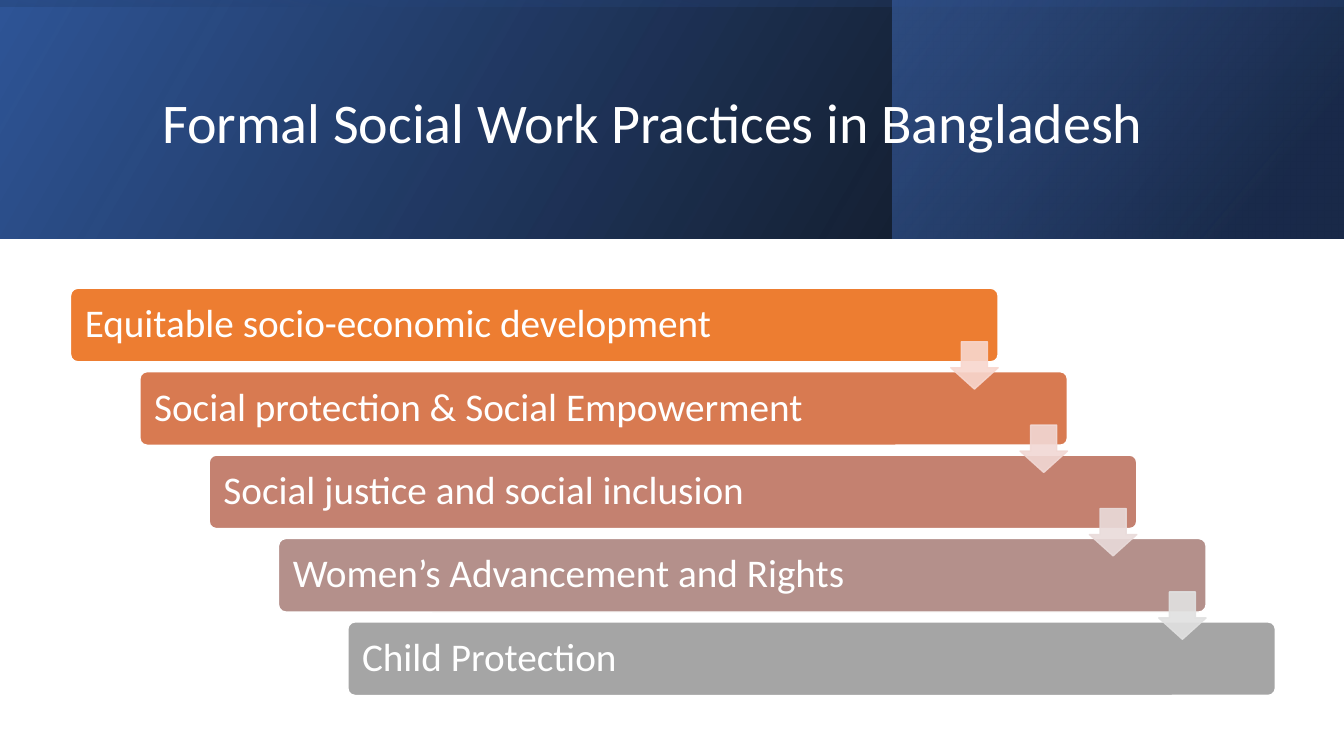
from dataclasses import dataclass

from lxml import etree
from pptx import Presentation
from pptx.dml.color import RGBColor
from pptx.enum import shapes, text
from pptx.oxml import ns
from pptx.util import Inches, Pt


@dataclass(frozen=True)
class Theme:
    font: str = "Calibri"
    title_size: int = 40
    step_size: int = 28
    white: str = "FFFFFF"
    # Gradient stops: position %, colour, opacity %
    band_base: tuple = ((0, "000000", 96), (100, "2F5597", 100))
    band_right: tuple = ((19, "203864", 68), (100, "4472C4", 48))
    band_shade: tuple = ((23, "2F5597", 16), (99, "000000", 45))
    step_fills: tuple = ("ED7D31", "D87A51", "C48170", "B4908B", "A5A5A5")
    arrow_fills: tuple = ("F8D7CE", "F1D8D4", "E9DBDA", "E1E1E1")
    arrow_opacity: int = 90


THEME = Theme()
TITLE = "Formal Social Work Practices in Bangladesh"
STEPS = (
    "Equitable socio-economic development",
    "Social protection & Social Empowerment",
    "Social justice and social inclusion",
    "Women’s Advancement and Rights",
    "Child Protection",
)


def set_opacity(color_element, percent):
    alpha = etree.SubElement(color_element, ns.qn("a:alpha"))
    alpha.set("val", str(percent * 1000))


def add_shape(slide, kind, left, top, width, height):
    shape = slide.shapes.add_shape(
        kind, Inches(left), Inches(top), Inches(width), Inches(height))
    shape.shadow.inherit = False
    return shape


def paint(shape, fill, line):
    shape.fill.solid()
    shape.fill.fore_color.rgb = RGBColor.from_string(fill)
    shape.line.color.rgb = RGBColor.from_string(line)
    shape.line.width = Pt(1)


def style_text(frame, content, size):
    frame.text = content
    frame.word_wrap = True
    frame.auto_size = text.MSO_AUTO_SIZE.NONE
    frame.vertical_anchor = text.MSO_ANCHOR.MIDDLE
    paragraph = frame.paragraphs[0]
    paragraph.alignment = text.PP_ALIGN.LEFT
    paragraph.line_spacing = 0.9
    paragraph.font.name = THEME.font
    paragraph.font.size = Pt(size)
    paragraph.font.color.rgb = RGBColor.from_string(THEME.white)


def add_gradient_panel(slide, box, stops, angle, rotation=0):
    """Add a mirrored rectangle; the angle runs clockwise in degrees."""
    panel = add_shape(slide, shapes.MSO_SHAPE.RECTANGLE, *box)
    panel.rotation = rotation
    panel.line.fill.background()
    panel.fill.gradient()
    properties = panel._element.spPr
    properties.find(ns.qn("a:xfrm")).set("flipH", "1")
    gradient = properties.find(ns.qn("a:gradFill"))
    stop_list = gradient.find(ns.qn("a:gsLst"))
    for old_stop in list(stop_list):
        stop_list.remove(old_stop)
    for position, color, opacity in stops:
        stop = etree.SubElement(stop_list, ns.qn("a:gs"), pos=str(position * 1000))
        set_opacity(etree.SubElement(stop, ns.qn("a:srgbClr"), val=color), opacity)
    direction = gradient.find(ns.qn("a:lin"))
    direction.set("ang", str(angle * 60000))
    direction.set("scaled", "0")


def build_header(slide, left, top, width, height):
    right_width = 4.48
    add_gradient_panel(slide, (left, top, width, height), THEME.band_base, 330)
    add_gradient_panel(
        slide, (left + width - right_width, top, right_width, height),
        THEME.band_right, 320)
    # A quarter turn swaps the sides around the band's centre.
    turned = (left + (width - height) / 2, top + (height - width) / 2, height, width)
    add_gradient_panel(slide, turned, THEME.band_shade, 350, rotation=270)

    title = slide.shapes.title
    title.left, title.top = Inches(left + 1.51), Inches(top + 0.38)
    title.width, title.height = Inches(10.63), Inches(1.72)
    style_text(title.text_frame, TITLE, THEME.title_size)
    slide.shapes._spTree.append(title._element)  # in front of the band


def build_staircase(slide, left, top, width, height):
    """Spread the steps diagonally over the box, with an arrow between each pair."""
    step_width, step_height, arrow_size = 9.2, 0.73, 0.47
    shift = (width - step_width) / (len(STEPS) - 1)
    drop = (height - step_height) / (len(STEPS) - 1)

    for i, (label, color) in enumerate(zip(STEPS, THEME.step_fills)):
        step = add_shape(slide, shapes.MSO_SHAPE.ROUNDED_RECTANGLE,
                         left + i * shift, top + i * drop, step_width, step_height)
        step.adjustments[0] = 0.1
        paint(step, color, THEME.white)
        frame = step.text_frame
        frame.margin_left = frame.margin_right = Inches(0.12)
        style_text(frame, label, THEME.step_size)

    for i, color in enumerate(THEME.arrow_fills):
        arrow = add_shape(slide, shapes.MSO_SHAPE.DOWN_ARROW,
                          left + i * shift + step_width - arrow_size,
                          top + i * drop + 0.53, arrow_size, arrow_size)
        arrow.adjustments[0] = 0.55
        arrow.adjustments[1] = 0.45
        paint(arrow, color, color)
        for color_element in arrow._element.spPr.iter(ns.qn("a:srgbClr")):
            set_opacity(color_element, THEME.arrow_opacity)


def main():
    deck = Presentation()
    deck.slide_width, deck.slide_height = Inches(13.33), Inches(7.5)
    slide = deck.slides.add_slide(deck.slide_layouts.get_by_name("Title Only"))
    build_header(slide, 0, 0, 13.33, 2.37)
    build_staircase(slide, 0.7, 2.86, 11.95, 4.04)
    deck.save("out.pptx")


if __name__ == "__main__":
    main()
